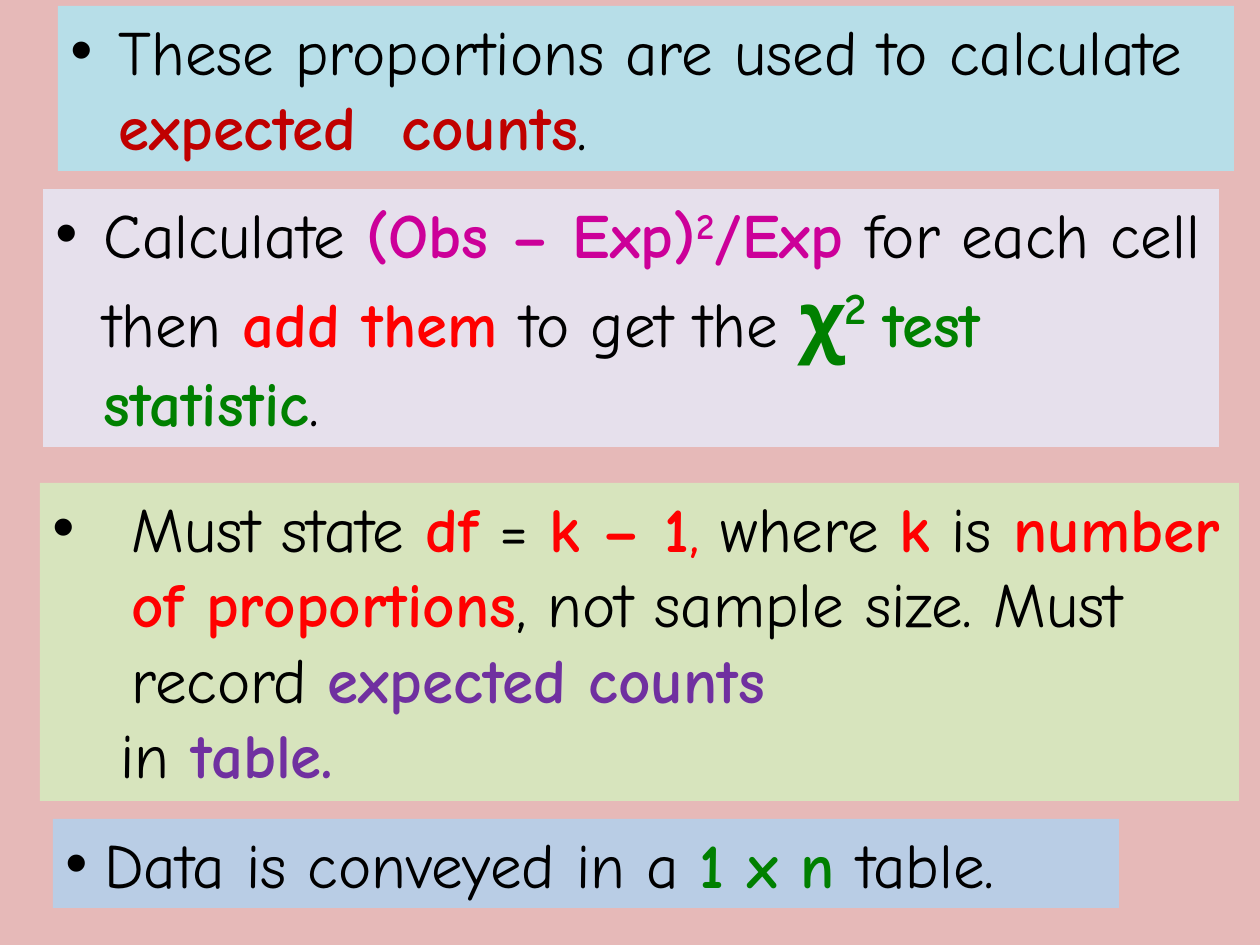
from lxml import etree
from pptx import Presentation
from pptx.dml.color import RGBColor
from pptx.enum.shapes import MSO_SHAPE
from pptx.enum.text import MSO_ANCHOR, MSO_AUTO_SIZE, PP_ALIGN
from pptx.oxml.ns import qn
from pptx.util import Emu, Pt

RECTANGLE = MSO_SHAPE.RECTANGLE
TOP = MSO_ANCHOR.TOP
LEFT = PP_ALIGN.LEFT
GROW = MSO_AUTO_SIZE.SHAPE_TO_FIT_TEXT
SCALE = 914400 / 126
FONT = "Comic Neue"
COLORS = {
    "page": "E6B9B8", "aqua": "B7DEE8", "lilac": "E6E0EC",
    "lime": "D7E4BD", "sky": "B9CDE5", "black": "000000",
    "crimson": "C00000", "magenta": "CC0099", "red": "FF0000",
    "green": "008000", "purple": "7030A0",
}

COUNTS = [
    ("These proportions are used to calculate ", "black"),
    ("expected  counts", "crimson"),
    (".", "black"),
]
STATISTIC = [
    ("Calculate ", "black"),
    ("(Obs – Exp)", "magenta"),
    ("2", "magenta", {"raised": True}),
    ("/Exp ", "magenta"),
    ("for each cell then ", "black"),
    ("add them ", "red"),
    ("to get the ", "black"),
    ("χ", "green", {"size": 44}),
    ("2 ", "green", {"size": 44, "raised": True}),
    ("test statistic", "green"),
    (".", "black"),
]
FREEDOM = [
    ("Must state ", "black"),
    ("df", "red"),
    (" = ", "black"),
    ("k – 1", "red"),
    (", ", "red", {"bold": False}),
    ("where ", "black"),
    ("k", "red"),
    (" is ", "black"),
    ("number of proportions", "red"),
    (", not sample size. Must record ", "black"),
    ("expected counts", "purple"),
]
RECORD = [("in", "black"), (" table.", "purple")]
TABLE_SHAPE = [
    ("Data is conveyed in a ", "black"),
    ("1 x n ", "green"),
    ("table.", "black"),
]


def px(length):
    """Turn whole pixels into EMU."""
    return Emu(round(length * SCALE))


def rgb(name):
    """Look up a named colour."""
    return RGBColor.from_string(COLORS[name])


def add_span(para, text, color, size=36, bold=None, raised=False):
    """Add one run; coloured words are bold unless told otherwise."""
    span = para.add_run()
    span.text = text
    span.font.name = FONT
    span.font.size = Pt(size)
    span.font.bold = color != "black" if bold is None else bold
    span.font.color.rgb = rgb(color)
    if raised:
        span.font._element.set("baseline", "30000")


def fill_para(para, spans, indent, bullet=True):
    """Write the runs of a paragraph with a hanging bullet or a plain indent."""
    para.alignment = LEFT
    props = para._p.get_or_add_pPr()
    props.set("marL", str(px(indent)))
    props.set("indent", str(px(-indent if bullet else 0)))
    if bullet:
        etree.SubElement(props, qn("a:buFont")).set("typeface", "Arial")
        etree.SubElement(props, qn("a:buChar")).set("char", "•")
    for text, color, *style in spans:
        add_span(para, text, color, **(style[0] if style else {}))


def add_panel(page, box, fill, spans, indent, wrap=True):
    """Place a filled panel with one bulleted paragraph and return its text frame."""
    panel = page.shapes.add_shape(RECTANGLE, *map(px, box))
    panel.shadow.inherit = False
    panel.fill.solid()
    panel.fill.fore_color.rgb = rgb(fill)
    panel.line.fill.background()
    frame = panel.text_frame
    frame.word_wrap = wrap
    frame.auto_size = GROW
    frame.vertical_anchor = TOP
    fill_para(frame.paragraphs[0], spans, indent)
    return frame


def build_page(deck):
    """Build the chi-square summary slide."""
    page = deck.slides.add_slide(deck.slide_layouts[6])
    page.background.fill.solid()
    page.background.fill.fore_color.rgb = rgb("page")
    add_panel(page, (58, 6, 1176, 165), "aqua", COUNTS, 48)
    add_panel(page, (43, 189, 1176, 258), "lilac", STATISTIC, 48)
    freedom = add_panel(page, (40, 483, 1199, 318), "lime", FREEDOM, 79)
    fill_para(freedom.add_paragraph(), RECORD, 68, bullet=False)
    add_panel(page, (53, 819, 1066, 89), "sky", TABLE_SHAPE, 39, wrap=False)


def main():
    """Create and save the deck."""
    deck = Presentation()
    deck.slide_width, deck.slide_height = px(1260), px(945)
    build_page(deck)
    deck.save("out.pptx")


if __name__ == "__main__":
    main()
